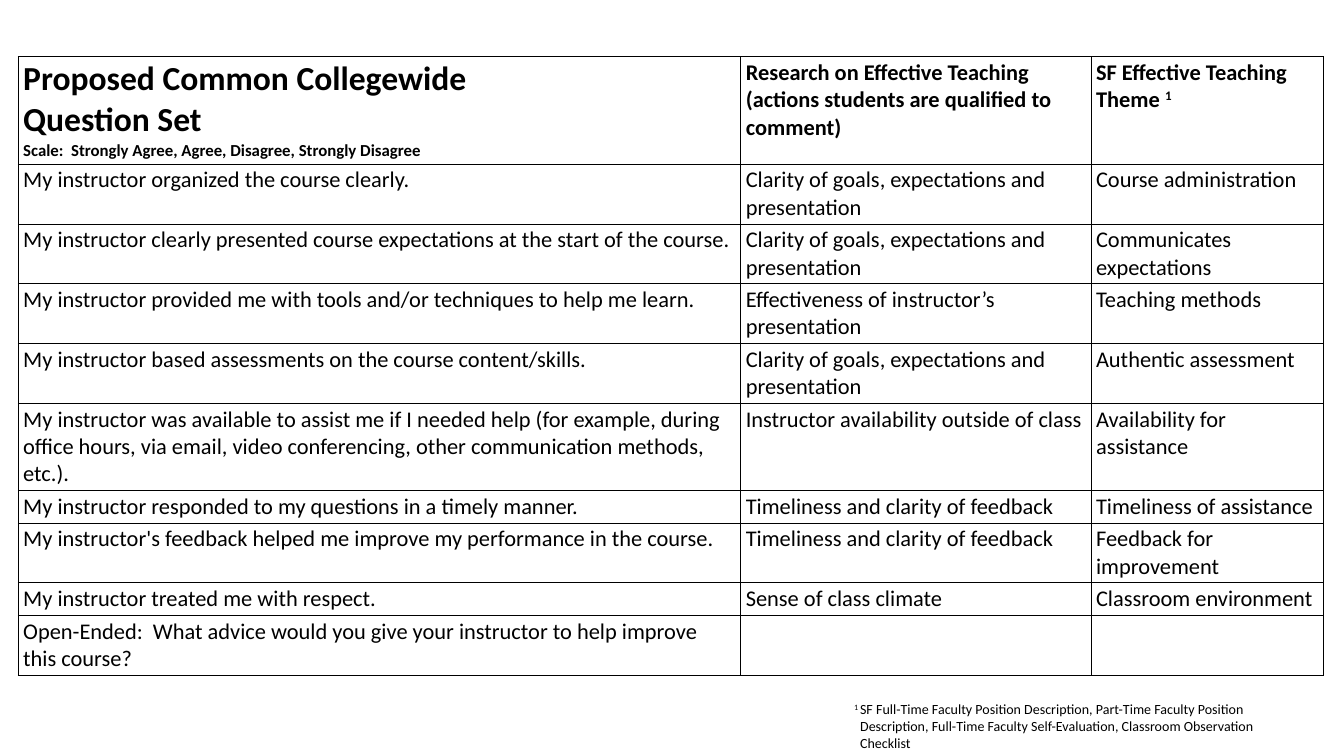
from lxml import etree
from pptx import Presentation
from pptx.dml.color import RGBColor
from pptx.enum.text import PP_ALIGN
from pptx.oxml import parse_xml
from pptx.oxml.ns import nsdecls
from pptx.util import Inches, Pt

LEFT = PP_ALIGN.LEFT
BLACK = RGBColor(0, 0, 0)
FONT = "Calibri"
LINE = 0.54  # height of one 32 pt line, inches
PAD = 0.1    # top and bottom cell margins together
COLS = [14.34, 6.95, 4.61]

CLEAR = "Clarity of goals, expectations and presentation"
TIMELY = "Timeliness and clarity of feedback"

HEAD = [
    "Proposed Common Collegewide \nQuestion Set\n"
    "Scale:  Strongly Agree, Agree, Disagree, Strongly Disagree",
    "Research on Effective Teaching (actions students are qualified to comment)",
    "SF Effective Teaching Theme ",
]
# Line count of the row, then its three cells
ROWS = [
    (2, "My instructor organized the course clearly.", CLEAR, "Course administration"),
    (2, "My instructor clearly presented course expectations at the start of the course.",
     CLEAR, "Communicates expectations"),
    (2, "My instructor provided me with tools and/or techniques to help me learn.",
     "Effectiveness of instructor’s presentation", "Teaching methods"),
    (2, "My instructor based assessments on the course content/skills.",
     CLEAR, "Authentic assessment"),
    (3, "My instructor was available to assist me if I needed help (for example, during "
     "office hours, via email, video conferencing, other communication methods, etc.).",
     "Instructor availability outside of class", "Availability for assistance"),
    (1, "My instructor responded to my questions in a timely manner.",
     TIMELY, "Timeliness of assistance"),
    (2, "My instructor's feedback helped me improve my performance in the course.",
     TIMELY, "Feedback for improvement"),
    (1, "My instructor treated me with respect.",
     "Sense of class climate", "Classroom environment"),
    (2, "Open-Ended:  What advice would you give your instructor to help improve "
     "this course?", "", ""),
]


def style(par, size, bold=False):
    par.alignment = LEFT
    for run in par.runs:
        font = run.font
        font.name, font.size, font.bold = FONT, Pt(size), bold
        font.color.rgb = BLACK


def border(cell):
    props = cell._tc.get_or_add_tcPr()
    for side in ("lnL", "lnR", "lnT", "lnB"):
        props.append(parse_xml(
            f'<a:{side} {nsdecls("a")} w="{Pt(1)}"><a:solidFill>'
            f'<a:srgbClr val="{BLACK}"/></a:solidFill></a:{side}>'))


prs = Presentation()
prs.slide_width, prs.slide_height = Inches(26.67), Inches(15)
slide = prs.slides.add_slide(prs.slide_layouts[6])

# Question table
highs = [2.03 + PAD] + [row[0] * LINE + PAD for row in ROWS]
frame = slide.shapes.add_table(
    len(highs), len(COLS), Inches(0.36), Inches(1.12),
    Inches(sum(COLS)), Inches(sum(highs)))
table = frame.table
table.first_row = table.horz_banding = False
for col, wide in zip(table.columns, COLS):
    col.width = Inches(wide)
for row, high in zip(table.rows, highs):
    row.height = Inches(high)

for r, texts in enumerate([HEAD] + [row[1:] for row in ROWS]):
    for c, text in enumerate(texts):
        cell = table.cell(r, c)
        border(cell)
        cell.fill.background()
        cell.text_frame.text = text
        for par in cell.text_frame.paragraphs:
            style(par, 32, bold=r == 0)

# Heading sizes and footnote mark
for par, size in zip(table.cell(0, 0).text_frame.paragraphs, (48, 48, 24)):
    style(par, size, bold=True)
par = table.cell(0, 2).text_frame.paragraphs[0]
mark = par.add_run()
mark.text = "1"
style(par, 32, bold=True)

# Footnote
box = slide.shapes.add_textbox(Inches(16.85), Inches(13.85), Inches(8.78), Inches(1.11))
box.text_frame.word_wrap = True
note = box.text_frame.paragraphs[0]
note.text = "1 "
note.add_run().text = (
    "SF Full-Time Faculty Position Description, Part-Time Faculty Position Description, "
    "Full-Time Faculty Self-Evaluation, Classroom Observation Checklist")
style(note, 20)
hang = note._p.get_or_add_pPr()
hang.set("marL", str(Inches(0.12)))
hang.set("indent", str(-Inches(0.12)))

# Raise both footnote marks
for run in (mark, note.runs[0]):
    run.font._element.set("baseline", "30000")

prs.save("out.pptx")
